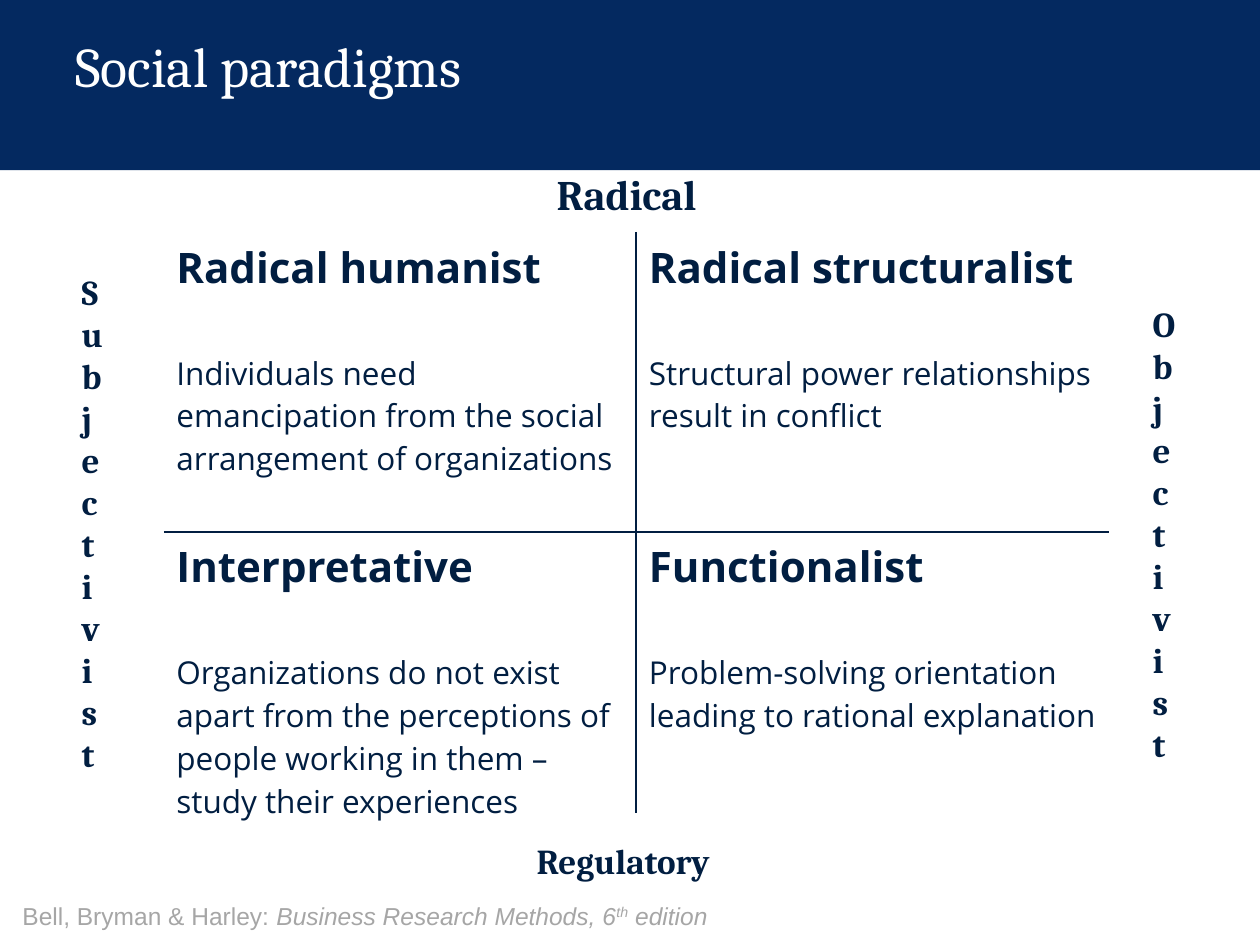
from dataclasses import dataclass

from lxml.etree import SubElement
from pptx import Presentation
from pptx.dml.color import RGBColor
from pptx.enum.shapes import MSO_SHAPE as Shape
from pptx.oxml.ns import qn
from pptx.slide import Slide
from pptx.table import _Cell as Cell
from pptx.text.text import _Paragraph as Paragraph
from pptx.util import Inches, Pt

NAVY, INK, WHITE, GREY = "042960", "011E41", "FFFFFF", "A6A6A6"


@dataclass
class Label:
    text: str
    left: float
    top: float
    width: float
    height: float
    size: int = 20
    color: str = INK
    font: str = "Cambria"
    bold: bool = True
    line_spacing: float = 1.0


@dataclass
class Paradigm:
    name: str
    summary: str


LABELS = [
    Label("Social paradigms", 0.5, 0.26, 9, 1.08, 32, WHITE, bold=False, line_spacing=0.9),
    Label("Radical", 4.32, 1.29, 1.69, 0.5, 24),
    Label("Regulatory", 4.16, 6.61, 1.91, 0.44),
    Label("Subjectivist", 0.55, 2.1, 0.33, 4.1),
    Label("Objectivist", 9.05, 2.35, 0.33, 3.77),
]
FOOTER = Label("Bell, Bryman & Harley: ", 0.08, 7.1, 5.86, 0.34, 14, GREY, "Arial", False)
GRID = [
    [
        Paradigm("Radical humanist",
                 "Individuals need emancipation from the social arrangement of organizations"),
        Paradigm("Radical structuralist", "Structural power relationships result in conflict"),
    ],
    [
        Paradigm("Interpretative",
                 "Organizations do not exist apart from the perceptions of people "
                 "working in them – study their experiences"),
        Paradigm("Functionalist", "Problem-solving orientation leading to rational explanation"),
    ],
]


def rgb(value: str) -> RGBColor:
    return RGBColor.from_string(value)


def style(para: Paragraph, font: str, size: int, color: str, bold: bool) -> None:
    for span in para.runs:
        span.font.name = font
        span.font.size = Pt(size)
        span.font.bold = bold
        span.font.color.rgb = rgb(color)


def add_label(page: Slide, label: Label) -> Paragraph:
    box = page.shapes.add_textbox(Inches(label.left), Inches(label.top),
                                  Inches(label.width), Inches(label.height))
    box.text_frame.word_wrap = True
    box.text_frame.text = label.text
    para = box.text_frame.paragraphs[0]
    para.line_spacing = label.line_spacing
    style(para, label.font, label.size, label.color, label.bold)
    return para


def add_footer(page: Slide) -> None:
    para = add_label(page, FOOTER)
    for text in ("Business Research Methods, 6", "th", " edition"):
        span = para.add_run()
        span.text = text
        span.font.italic = True
        if text == "th":
            span.font._element.set("baseline", "30000")
    style(para, FOOTER.font, FOOTER.size, FOOTER.color, FOOTER.bold)


def set_borders(cell: Cell, row: int, column: int) -> None:
    inner = {"lnL": column == 1, "lnR": column == 0, "lnT": row == 1, "lnB": row == 0}
    properties = cell._tc.get_or_add_tcPr()
    for side, is_inner in inner.items():
        line = SubElement(properties, qn(f"a:{side}"), w=str(Pt(1.25)))
        if is_inner:
            fill = SubElement(line, qn("a:solidFill"))
            SubElement(fill, qn("a:srgbClr"), val=INK)
        else:
            SubElement(line, qn("a:noFill"))


def fill_cell(cell: Cell, paradigm: Paradigm) -> None:
    cell.text_frame.text = f"{paradigm.name}\n{paradigm.summary}"
    heading, body = cell.text_frame.paragraphs
    body.space_before = Pt(32)
    style(heading, "Open Sans", 24, INK, True)
    style(body, "Open Sans", 18, INK, False)


def add_matrix(page: Slide) -> None:
    table = page.shapes.add_table(2, 2, Inches(1.3), Inches(1.84),
                                  Inches(7.5), Inches(4.61)).table
    table.first_row = table.horz_banding = False
    for row, height in zip(table.rows, (2.38, 2.23)):
        row.height = Inches(height)
    for r, paradigms in enumerate(GRID):
        for c, paradigm in enumerate(paradigms):
            cell = table.cell(r, c)
            fill_cell(cell, paradigm)
            set_borders(cell, r, c)
            cell.fill.background()


def main() -> None:
    deck = Presentation()
    deck.slide_width, deck.slide_height = Inches(10), Inches(7.5)
    page = deck.slides.add_slide(deck.slide_layouts[6])
    banner = page.shapes.add_shape(Shape.RECTANGLE, Inches(-0.01), 0, Inches(10.01), Inches(1.35))
    banner.shadow.inherit = False
    banner.fill.solid()
    banner.fill.fore_color.rgb = rgb(NAVY)
    banner.line.fill.background()
    add_footer(page)
    add_matrix(page)
    for label in LABELS:
        add_label(page, label)
    deck.save("out.pptx")


if __name__ == "__main__":
    main()
